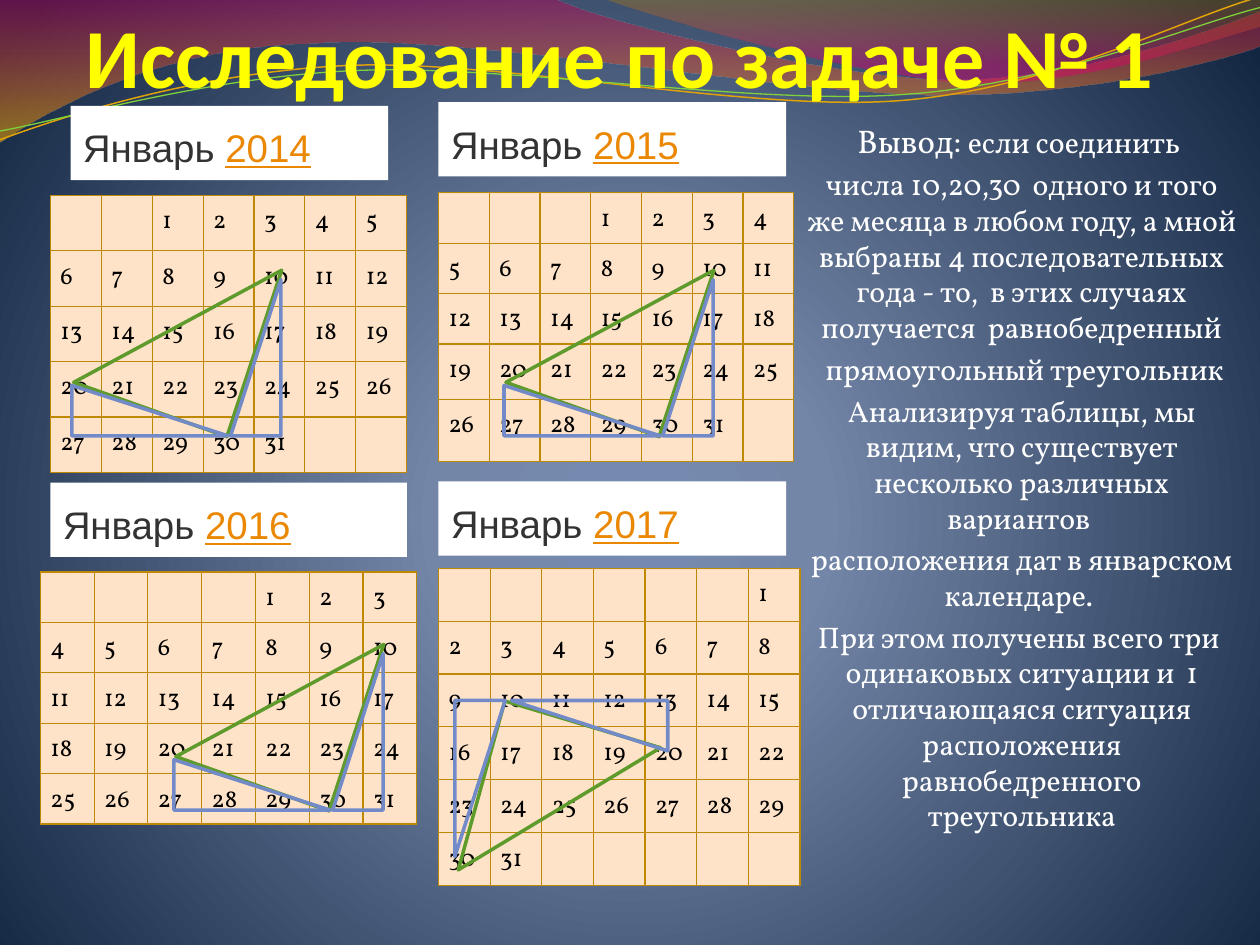
from math import ceil

from pptx import Presentation
from pptx.dml.color import RGBColor
from pptx.enum.shapes import MSO_SHAPE
from pptx.enum.text import MSO_ANCHOR, MSO_AUTO_SIZE, PP_ALIGN
from pptx.oxml import parse_xml
from pptx.oxml.ns import nsdecls, qn
from pptx.util import Inches, Pt

COLORS = {
    "title": "FFFF00", "body": "FFFFFF", "label": "FFFFFF", "month": "333333",
    "year": "EB8803", "cell": "FFE3C8", "border": "BF8905", "date": "000000",
    "hypotenuse": "5E9B2C", "legs": "738AC8", "gold": "E0A209", "lime": "7FD13B",
}
TITLE = "Исследование по задаче № 1"
LEAD = "Вывод: "
CONCLUSIONS = [
    "если соединить ",
    "числа 10,20,30  одного и того же месяца в любом году, а мной выбраны "
    "4 последовательных года - то,  в этих случаях получается  равнобедренный",
    " прямоугольный треугольник",
    "Анализируя таблицы, мы видим, что существует несколько различных вариантов ",
    "расположения дат в январском календаре. ",
    "При этом получены всего три  одинаковых ситуации и  1 отличающаяся ситуация "
    "расположения равнобедренного треугольника",
]
# Gradient stops: position %, colour, opacity %
BACKDROP = [(0, "768BB1", 100), (25, "7386A7", 100), (100, "122541", 100)]
BACKDROP_SHAPE = ('<a:path path="circle"><a:fillToRect l="10000" t="110000" '
                  'r="10000" b="100000"/></a:path>')
DOWNWARD = '<a:lin ang="5400000" scaled="1"/>'
# Waves: start point, then lines (one point) and Bezier curves (three points)
WAVES = [
    ((0, 0), [
        [(4.4, -0.01)],
        [(4.76, 0.17), (6.64, 0.63), (7.58, 0.63)],
        [(8.53, 0.63), (9.58, 0.26), (10, 0.09)],
        [(10.01, 0.36)],
        [(9.83, 0.44), (8.7, 0.76), (7.46, 0.75)],
        [(6.22, 0.75), (3.82, 0.28), (2.57, 0.34)],
        [(1.29, 0.36), (0.46, 0.83), (-0.01, 1.13)],
        [(0, 0)],
    ], [(0, "BD0059", 45), (100, "F0AB00", 55)]),
    ((4.79, -0.01), [
        [(5.09, 0.11), (6.82, 0.62), (7.69, 0.65)],
        [(8.56, 0.69), (9.61, 0.32), (10, 0.21)],
        [(10, 0)],
        [(4.79, -0.01)],
    ], [(0, "C38B00", 30), (80, "E1006B", 45)]),
]
STRANDS = [
    ((0, 1.11), [
        [(0.48, 0.93), (1.58, 0.57), (2.77, 0.52)],
        [(3.95, 0.47), (5.93, 0.89), (7.13, 0.8)],
        [(8.33, 0.71), (9.38, 0.15), (9.98, -0.02)],
    ], "gold", 0.85),
    ((0, 1.04), [
        [(0.47, 0.96), (1.64, 0.61), (2.83, 0.56)],
        [(4.03, 0.51), (5.97, 0.84), (7.17, 0.75)],
        [(8.36, 0.67), (9.41, 0.21), (10, 0.06)],
    ], "lime", 0.75),
]
# "blank" is the number of empty cells before January 1
CALENDARS = [
    dict(year="2014", blank=2, at=(0.4, 1.55), width=2.83, rows=[0.44] * 5,
         label=(0.56, 0.84, 2.52, 0.59)),
    dict(year="2015", blank=3, at=(3.48, 1.53), width=2.82,
         rows=[0.4, 0.4, 0.4, 0.44, 0.49], label=(3.48, 0.81, 2.76, 0.59)),
    dict(year="2016", blank=4, at=(0.32, 4.54), width=2.99, rows=[0.4] * 5,
         label=(0.4, 3.83, 2.83, 0.59)),
    dict(year="2017", blank=6, at=(3.48, 4.51), width=2.87, rows=[0.42] * 6,
         label=(3.48, 3.82, 2.76, 0.59)),
]
# Large triangle: left, top, rotation; small ones: offset from it, rotation
USUAL_LEGS = [(0.21, 0.74, 270), (1.05, 0.32, 180)]
TRIANGLES = [
    (4.21, 1.9, 19.5, USUAL_LEGS),
    (0.78, 1.9, 19.5, USUAL_LEGS),
    (1.59, 4.87, 19.5, USUAL_LEGS),
    (3.78, 5.72, 196.7, [(0.7, -0.58, 90), (-0.17, -0.16, 0)]),
]
DAYS_IN_WEEK, DAYS_IN_JANUARY = 7, 31


def rgb(name):
    return RGBColor.from_string(COLORS[name])


def set_font(font, face, size, color):
    font.name, font.size = face, Pt(size)
    font.color.rgb = rgb(color)


def gradient(stops, direction):
    marks = "".join(
        f'<a:gs pos="{pos * 1000}"><a:srgbClr val="{color}">'
        f'<a:alpha val="{opacity * 1000}"/></a:srgbClr></a:gs>'
        for pos, color, opacity in stops)
    return (f'<a:gradFill {nsdecls("a")} rotWithShape="1"><a:gsLst>{marks}</a:gsLst>'
            f'{direction}</a:gradFill>')


def add_curve(start, segments, close):
    """Build a freeform through the segment ends, then bend its curved segments."""
    builder = slide.shapes.build_freeform(*map(Inches, start))
    builder.add_line_segments([tuple(map(Inches, segment[-1])) for segment in segments],
                              close=close)
    curve = builder.convert_to_shape()
    curve.shadow.inherit = False
    curve.fill.background()
    straights = list(curve.element.iter(qn("a:lnTo")))
    for straight, segment in zip(straights, segments):
        if len(segment) == 3:
            points = "".join(f'<a:pt x="{Inches(x) - curve.left}" y="{Inches(y) - curve.top}"/>'
                             for x, y in segment)
            straight.getparent().replace(straight, parse_xml(
                f'<a:cubicBezTo {nsdecls("a")}>{points}</a:cubicBezTo>'))
    return curve


def add_triangle(left, top, width, height, rotation, peak, color):
    triangle = slide.shapes.add_shape(MSO_SHAPE.ISOSCELES_TRIANGLE,
                                      *map(Inches, (left, top, width, height)))
    triangle.adjustments[0] = peak
    triangle.rotation = rotation
    triangle.shadow.inherit = False
    triangle.fill.background()
    triangle.line.color.rgb, triangle.line.width = rgb(color), Pt(2)
    return triangle


def add_borders(cell):
    props = cell._tc.get_or_add_tcPr()
    for index, side in enumerate(("lnL", "lnR", "lnT", "lnB")):
        props.insert(index, parse_xml(
            f'<a:{side} {nsdecls("a")} w="9525"><a:solidFill>'
            f'<a:srgbClr val="{COLORS["border"]}"/></a:solidFill></a:{side}>'))


def add_calendar(year, blank, at, width, rows, label):
    weeks = ceil((blank + DAYS_IN_JANUARY) / DAYS_IN_WEEK)
    table = slide.shapes.add_table(weeks, DAYS_IN_WEEK, *map(
        Inches, (*at, width, sum(rows)))).table
    table.first_row = table.horz_banding = False
    for column in table.columns:
        column.width = Inches(width / DAYS_IN_WEEK)
    for row, height in zip(table.rows, rows):
        row.height = Inches(height)
    for index, cell in enumerate(table.iter_cells()):
        day = index - blank + 1
        shown = 1 <= day <= DAYS_IN_JANUARY
        cell.margin_left = cell.margin_right = Inches(0.08)
        cell.margin_top = cell.margin_bottom = Inches(0.08 if shown else 0)
        cell.fill.solid()
        cell.fill.fore_color.rgb = rgb("cell")
        add_borders(cell)
        cell.text = str(day) if shown else ""
        set_font(cell.text_frame.paragraphs[0].font, "Vollkorn", 14, "date")

    plate = slide.shapes.add_shape(MSO_SHAPE.RECTANGLE, *map(Inches, label))
    plate.shadow.inherit = False
    plate.fill.solid()
    plate.fill.fore_color.rgb = rgb("label")
    plate.line.fill.background()
    frame = plate.text_frame
    frame.auto_size = MSO_AUTO_SIZE.SHAPE_TO_FIT_TEXT
    frame.vertical_anchor = MSO_ANCHOR.MIDDLE
    frame.margin_top, frame.margin_bottom = Inches(0.14), Inches(0.07)
    heading = frame.paragraphs[0]
    heading.alignment = PP_ALIGN.LEFT
    for text, color in (("Январь ", "month"), (year, "year")):
        run = heading.add_run()
        run.text = text
        set_font(run.font, "Arial", 22, color)
    run.font.underline = True


prs = Presentation()
prs.slide_width, prs.slide_height = Inches(10), Inches(7.5)
slide = prs.slides.add_slide(prs.slide_layouts[5])
slide.element.cSld.insert(0, parse_xml(
    f'<p:bg {nsdecls("p")}><p:bgPr>{gradient(BACKDROP, BACKDROP_SHAPE)}'
    f'<a:effectLst {nsdecls("a")}/></p:bgPr></p:bg>'))

for start, segments, stops in WAVES:
    wave = add_curve(start, segments, close=True)
    wave.line.fill.background()
    props = wave.element.spPr
    props.replace(props.find(qn("a:noFill")), parse_xml(gradient(stops, DOWNWARD)))
for start, segments, color, weight in STRANDS:
    strand = add_curve(start, segments, close=False)
    strand.line.color.rgb, strand.line.width = rgb(color), Pt(weight)

conclusion = slide.shapes.add_textbox(*map(Inches, (6.34, 0.91, 3.54, 5.6))).text_frame
conclusion.word_wrap = True
conclusion.margin_left = conclusion.margin_right = Inches(0.05)
for index, text in enumerate(CONCLUSIONS):
    paragraph = conclusion.add_paragraph() if index else conclusion.paragraphs[0]
    paragraph.alignment, paragraph.space_before = PP_ALIGN.CENTER, Pt(3.4)
    set_font(paragraph.font, "Vollkorn", 17, "body")
    if index == 0:
        lead = paragraph.add_run()
        lead.text, lead.font.size = LEAD, Pt(18.7)
    paragraph.add_run().text = text

title = slide.shapes.title
slide.shapes._spTree.append(title.element)  # in front of the waves
title.left, title.top, title.width, title.height = map(Inches, (0.67, 0.01, 8.5, 0.83))
frame = title.text_frame
frame.text = TITLE
frame.vertical_anchor = MSO_ANCHOR.BOTTOM
frame.margin_left = frame.margin_right = frame.margin_top = frame.margin_bottom = 0
frame.paragraphs[0].alignment = PP_ALIGN.CENTER
set_font(frame.paragraphs[0].font, "Calibri", 48, "title")
frame.paragraphs[0].font.bold = True

for calendar in CALENDARS:
    add_calendar(**calendar)
for left, top, rotation, legs in TRIANGLES:
    add_triangle(left, top, 1.29, 1.39, rotation, 0.976, "hypotenuse")
    for dx, dy, turn in legs:
        small = add_triangle(left + dx, top + dy, 0.4, 1.24, turn, 0, "legs")
        small.element.spPr.xfrm.set("flipV", "1")

prs.save("out.pptx")
